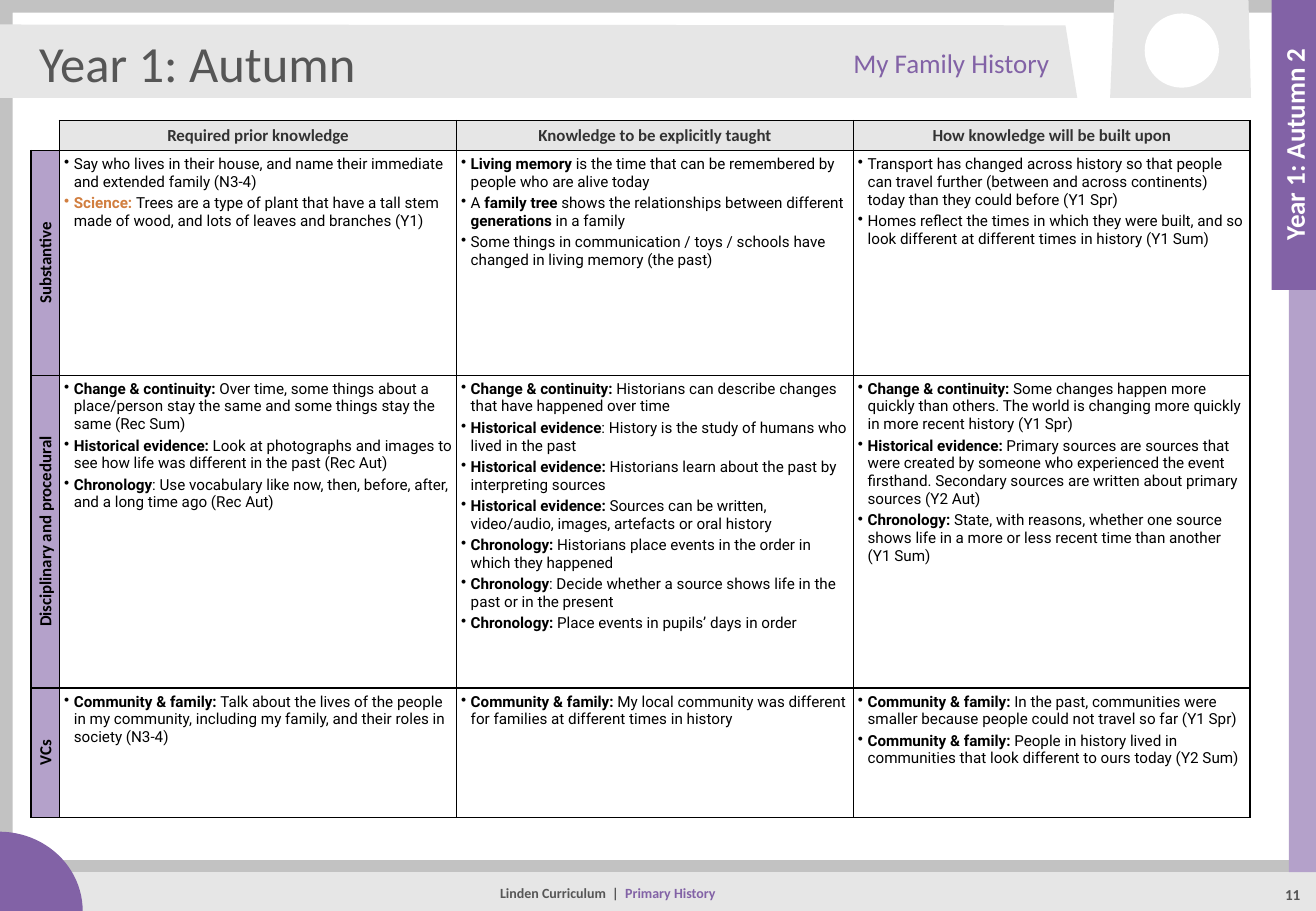
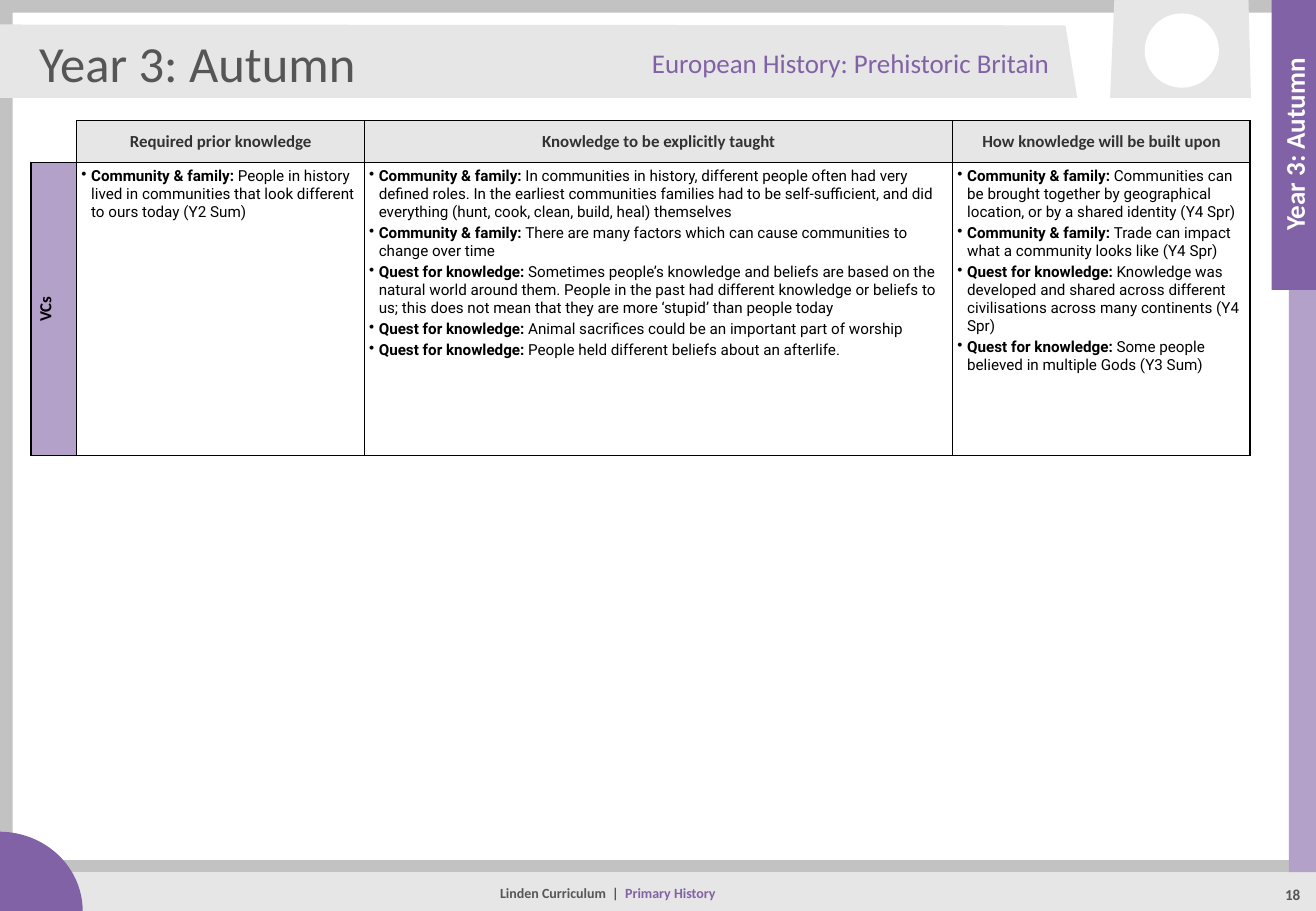
from lxml.etree import SubElement
from pptx import Presentation
from pptx.dml.color import RGBColor
from pptx.enum.shapes import MSO_CONNECTOR, MSO_SHAPE
from pptx.enum.text import MSO_ANCHOR as ANCHOR, MSO_AUTO_SIZE, PP_ALIGN as ALIGN
from pptx.oxml.ns import qn
from pptx.util import Pt

WIDTH, HEIGHT = 780, 540
TITLE_ONLY = 5
LINKED_SUBJECTS = {"Science: "}


def rgb(value):
    return RGBColor.from_string(value)


def assign(obj, **values):
    for name, value in values.items():
        setattr(obj, name, value)


class Deck:
    GREY, PALE, WHITE, BLACK = "C2C2C2", "E6E6E6", "FFFFFF", "000000"
    DARK, HEADING = "565656", "323232"
    PURPLE, LILAC, ORANGE = "8262A6", "B4A1CA", "D17E3F"

    # Each text style pairs a colour with font attributes.
    TITLE = DARK, dict(name="Calibri", size=Pt(30), bold=False)
    TOPIC = PURPLE, dict(name="Calibri", size=Pt(16))
    TAB = WHITE, dict(name="Calibri", size=Pt(16), bold=True)
    FOOTER = DARK, dict(name="Calibri", size=Pt(8.3), bold=True)
    FOOTER_SUBJECT = PURPLE, FOOTER[1]
    NUMBER = DARK, dict(name="Calibri", size=Pt(9), bold=True)
    HEAD = HEADING, dict(name="Calibri", size=Pt(10), bold=True)
    SIDE = BLACK, HEAD[1]
    BODY = dict(name="Roboto", size=Pt(9))

    def __init__(self):
        self.prs = Presentation()
        assign(self.prs, slide_width=Pt(WIDTH), slide_height=Pt(HEIGHT))
        self.layout = self.prs.slide_layouts[TITLE_ONLY]
        self.s = None

    def add_slide(self):
        self.s = self.prs.slides.add_slide(self.layout)

    def paint(self, sp, color):
        sp.shadow.inherit = False
        sp.fill.solid()
        sp.fill.fore_color.rgb = rgb(color)
        sp.line.fill.background()
        return sp

    def shape(self, kind, x, y, w, h, color):
        sp = self.s.shapes.add_shape(kind, Pt(x), Pt(y), Pt(w), Pt(h))
        return self.paint(sp, color)

    def polygon(self, points, color):
        (x, y), *rest = points
        builder = self.s.shapes.build_freeform(Pt(x), Pt(y))
        builder.add_line_segments([(Pt(a), Pt(b)) for a, b in rest])
        return self.paint(builder.convert_to_shape(), color)

    def rule(self, x1, y1, x2, y2, color, width):
        line = self.s.shapes.add_connector(MSO_CONNECTOR.STRAIGHT, Pt(x1), Pt(y1), Pt(x2), Pt(y2))
        line.line.width = Pt(width)
        line.line.color.rgb = rgb(color)
        SubElement(line._element.spPr, qn("a:effectLst"))

    def run(self, p, text, style):
        color, font = style
        r = p.add_run()
        r.text = text
        assign(r.font, **font)
        r.font.color.rgb = rgb(color)

    def set_text(self, sp, runs, align):
        """Fill a one-paragraph frame with (text, style) runs."""
        tf = sp.text_frame
        assign(tf, word_wrap=True, auto_size=MSO_AUTO_SIZE.NONE, vertical_anchor=ANCHOR.MIDDLE)
        p = tf.paragraphs[0]
        p.alignment = align
        for text, style in runs:
            self.run(p, text, style)

    def text(self, x, y, w, h, runs, align=ALIGN.CENTER):
        sp = self.s.shapes.add_textbox(Pt(x), Pt(y), Pt(w), Pt(h))
        self.set_text(sp, runs, align)
        return sp

    def title(self, text):
        sp = self.s.shapes.title
        assign(sp, left=Pt(16), top=Pt(19), width=Pt(247), height=Pt(36))
        self.set_text(sp, [(text, self.TITLE)], ALIGN.LEFT)

    def tab(self, text):
        """Upright label on the right edge, reading upwards."""
        sp = self.shape(MSO_SHAPE.RECTANGLE, 681, 72.5, 172, 26.5, self.PURPLE)
        sp.rotation = 270
        self.set_text(sp, [(text, self.TAB)], ALIGN.CENTER)

    def page_number(self, number):
        sp = self.text(753.5, 518.5, 25.5, 23, [(str(number), self.NUMBER)])
        assign(sp.text_frame, margin_left=0, margin_right=0)

    def shared_layout(self):
        """Draw the bands and footer on the current slide, then move them to its layout."""
        for ph in list(self.layout.placeholders)[1:]:
            ph._element.getparent().remove(ph._element)
        rect = MSO_SHAPE.RECTANGLE
        frame = self.shape(MSO_SHAPE.FRAME, 0, 0, WIDTH, HEIGHT, self.GREY)
        frame.adjustments[0] = 7.5 / HEIGHT
        self.shape(rect, 23, 517, WIDTH - 23, 23, self.PALE)
        self.rule(3.5, 513.5, WIDTH, 513.5, self.GREY, 7)
        self.shape(MSO_SHAPE.ARC, -50, 493, 99, 94, self.PURPLE)
        self.text(147.5, 519, 425.5, 21, [("Linden Curriculum  |  ", self.FOOTER),
                                          ("Primary History", self.FOOTER_SUBJECT)])
        self.polygon([(0, 14.5), (631.5, 15), (638.5, 58), (0, 58)], self.PALE)
        self.shape(rect, 764, 0, 16, 517, self.LILAC)
        self.polygon([(658, 58), (741.5, 58), (740, 0), (660.5, 0)], self.PALE)
        self.shape(MSO_SHAPE.OVAL, 678.5, 8, 44, 44, self.WHITE)
        for sp in list(self.s.shapes):
            if not sp.is_placeholder:
                self.layout.shapes._spTree.append(sp._element)

    def borders(self, cell, open_sides=""):
        tcPr = cell._tc.get_or_add_tcPr()
        for side in "LRTB":
            ln = SubElement(tcPr, qn(f"a:ln{side}"), w=str(Pt(1)))
            if side in open_sides:
                SubElement(ln, qn("a:noFill"))
            else:
                fill = SubElement(ln, qn("a:solidFill"))
                SubElement(fill, qn("a:srgbClr"), val=self.BLACK)

    def cell_fill(self, cell, color):
        cell.fill.solid()
        cell.fill.fore_color.rgb = rgb(color)

    def label(self, cell, text, style, color):
        self.cell_fill(cell, color)
        cell.vertical_anchor = ANCHOR.MIDDLE
        p = cell.text_frame.paragraphs[0]
        p.alignment = ALIGN.CENTER
        self.run(p, text, style)

    def bullets(self, cell, items):
        """Add one bullet per item; text between asterisks is bold."""
        self.cell_fill(cell, self.WHITE)
        tf = cell.text_frame
        for i, item in enumerate(items):
            p = tf.add_paragraph() if i else tf.paragraphs[0]
            pPr = p._p.get_or_add_pPr()
            pPr.set("marL", str(Pt(5.75)))
            pPr.set("indent", str(-Pt(5.75)))
            SubElement(pPr, qn("a:buChar"), char="•")
            p.space_after = Pt(2)
            for j, part in enumerate(item.split("*")):
                if part:
                    color = self.ORANGE if part in LINKED_SUBJECTS else self.BLACK
                    self.run(p, part, (color, dict(self.BODY, bold=j % 2 == 1)))

    def knowledge_table(self, cols, rows, strands):
        """strands maps each side label to its three lists of bullets."""
        gf = self.s.shapes.add_table(len(rows), len(cols), Pt(18.25), Pt(71.5),
                                     Pt(sum(cols)), Pt(sum(rows)))
        table = gf.table
        for col, w in zip(table.columns, cols):
            col.width = Pt(w)
        for row, h in zip(table.rows, rows):
            row.height = Pt(h)
        margins = {f"margin_{side}": Pt(2.8) for side in ("left", "right", "top", "bottom")}
        corner = table.cell(0, 0)
        for cell in table.iter_cells():
            assign(cell, **margins)
            self.borders(cell, "LT" if cell._tc is corner._tc else "")
        corner.fill.background()
        SubElement(corner.text_frame.paragraphs[0]._p, qn("a:endParaRPr"), sz="900")
        for c, heading in enumerate(HEADINGS, 1):
            self.label(table.cell(0, c), heading, self.HEAD, self.PALE)
        for r, (strand, columns) in enumerate(strands.items(), 1):
            side = table.cell(r, 0)
            self.label(side, strand, self.SIDE, self.LILAC)
            side._tc.get_or_add_tcPr().set("vert", "vert270")
            for c, items in enumerate(columns, 1):
                self.bullets(table.cell(r, c), items)


HEADINGS = ["Required prior knowledge", "Knowledge to be explicitly taught",
            "How knowledge will be built upon"]

FAMILY_HISTORY = {
    "Substantive": [
        ["Say who lives in their house, and name their immediate and extended family (N3-4)",
         "*Science: *Trees are a type of plant that have a tall stem made of wood, and lots of leaves "
         "and branches (Y1)"],
        ["*Living memory* is the time that can be remembered by people who are alive today",
         "A *family tree *shows the relationships between different *generations* in a family",
         "Some things in communication / toys / schools have changed in living memory (the past)"],
        ["Transport has changed across history so that people can travel further (between and across "
         "continents) today than they could before (Y1 Spr)",
         "Homes reflect the times in which they were built, and so look different at different times "
         "in history (Y1 Sum)"],
    ],
    "Disciplinary and procedural": [
        ["*Change & continuity: *Over time, some things about a place/person stay the same and some "
         "things stay the same (Rec Sum)",
         "*Historical evidence: *Look at photographs and images to see how life was different in the "
         "past (Rec Aut)",
         "*Chronology*: Use vocabulary like now, then, before, after, and a long time ago (Rec Aut)"],
        ["*Change & continuity: *Historians can describe changes that have happened over time",
         "*Historical evidence*: History is the study of humans who lived in the past",
         "*Historical evidence: *Historians learn about the past by interpreting sources",
         "*Historical evidence: *Sources can be written, video/audio, images, artefacts or oral history",
         "*Chronology: *Historians place events in the order in which they happened",
         "*Chronology*: Decide whether a source shows life in the past or in the present",
         "*Chronology: *Place events in pupils’ days in order"],
        ["*Change & continuity: *Some changes happen more quickly than others. The world is changing "
         "more quickly in more recent history (Y1 Spr)",
         "*Historical evidence: *Primary sources are sources that were created by someone who "
         "experienced the event firsthand. Secondary sources are written about primary sources (Y2 Aut)",
         "*Chronology: *State, with reasons, whether one source shows life in a more or less recent "
         "time than another (Y1 Sum)"],
    ],
    "VCs": [
        ["*Community & family: *Talk about the lives of the people in my community, including my "
         "family, and their roles in society (N3-4)"],
        ["*Community & family: *My local community was different for families at different times in "
         "history"],
        ["*Community & family: *In the past, communities were smaller because people could not travel "
         "so far (Y1 Spr)",
         "*Community & family: *People in history lived in communities that look different to ours "
         "today (Y2 Sum)"],
    ],
}

PREHISTORIC_BRITAIN = {
    "VCs": [
        ["*Community & family: *People in history lived in communities that look different to ours "
         "today (Y2 Sum)"],
        ["*Community & family: *In communities in history, different people often had very defined "
         "roles. In the earliest communities families had to be self-sufficient, and did everything "
         "(hunt, cook, clean, build, heal) themselves",
         "*Community & family: *There are many factors which can cause communities to change over time",
         "*Quest for knowledge: *Sometimes people’s knowledge and beliefs are based on the natural "
         "world around them. People in the past had different knowledge or beliefs to us; this does "
         "not mean that they are more ‘stupid’ than people today",
         "*Quest for knowledge: *Animal sacrifices could be an important part of worship",
         "*Quest for knowledge: *People held different beliefs about an afterlife."],
        ["*Community & family: *Communities can be brought together by geographical location, or by a "
         "shared identity (Y4 Spr)",
         "*Community & family: *Trade can impact what a community looks like (Y4 Spr)",
         "*Quest for knowledge: *Knowledge was developed and shared across different civilisations "
         "across many continents (Y4 Spr)",
         "*Quest for knowledge: *Some people believed in multiple Gods (Y3 Sum)"],
    ],
}

UNITS = [
    dict(title="Year 1: Autumn", tab="Year 1: Autumn 2", topic="My Family History", number=11,
         cols=[17, 235.25, 235.25, 235.25], rows=[17.5, 133.25, 185.5, 76.5], strands=FAMILY_HISTORY),
    dict(title="Year 3: Autumn", tab="Year 3: Autumn", topic="European History: Prehistoric Britain",
         number=18, cols=[27.25, 170.5, 348.75, 176.25], rows=[25, 173.5], strands=PREHISTORIC_BRITAIN),
]


def main():
    deck = Deck()
    for i, unit in enumerate(UNITS):
        deck.add_slide()
        if i == 0:
            deck.shared_layout()
        deck.title(unit["title"])
        deck.tab(unit["tab"])
        deck.text(268.5, 19, 360.5, 36, [(unit["topic"], deck.TOPIC)], ALIGN.RIGHT)
        deck.page_number(unit["number"])
        deck.knowledge_table(unit["cols"], unit["rows"], unit["strands"])
    deck.prs.save("out.pptx")


if __name__ == "__main__":
    main()
